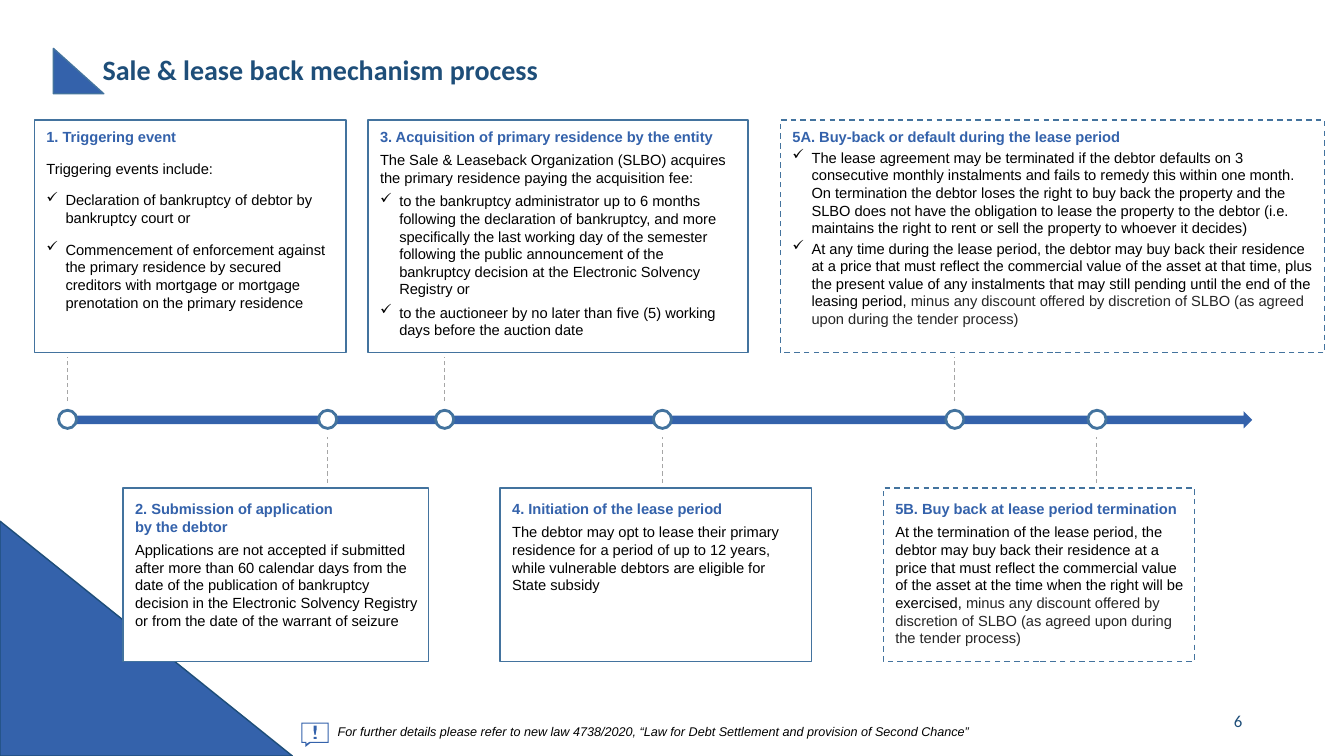
from lxml import etree
from pptx import Presentation
from pptx import util as u
from pptx.dml.color import RGBColor
from pptx.enum import dml, shapes, text
from pptx.oxml import ns

PX = 9144
BLUE = RGBColor(0x34, 0x62, 0xAB)
NAVY = RGBColor(0x1E, 0x4E, 0x79)
EDGE = RGBColor(0x43, 0x73, 0x9E)
GREY = RGBColor(0xA6, 0xA6, 0xA6)
DARK = RGBColor(0x26, 0x26, 0x26)
BLACK = RGBColor(0, 0, 0)
WHITE = RGBColor(0xFF, 0xFF, 0xFF)

HEADING = dict(name="Arial", size=u.Pt(10.5), bold=True, color=BLUE)
BODY = dict(name="Arial", size=u.Pt(10.5), bold=False, color=BLACK)
ASIDE = dict(BODY, color=DARK)
TITLE = dict(name="Calibri", size=u.Pt(20), bold=True, color=NAVY)
NUMBER = dict(name="Calibri", size=u.Pt(12), color=NAVY)
NOTE = dict(name="Arial", size=u.Pt(9), italic=True, color=BLACK)

DISCOUNT = ("minus any discount offered by discretion of SLBO "
            "(as agreed upon during the tender process)")

UPPER_STAGES = [
    dict(box=(34, 119, 309, 231), node=67, before=2, after=8,
         heading="1. Triggering event",
         intro="Triggering events include:",
         bullets=["Declaration of bankruptcy of debtor by bankruptcy court or",
                  "Commencement of enforcement against the primary residence by secured "
                  "creditors with mortgage or mortgage prenotation on the primary residence"]),
    dict(box=(365, 119, 377, 231), node=441, before=2,
         heading="3. Acquisition of primary residence by the entity",
         intro="The Sale & Leaseback Organization (SLBO) acquires the primary residence "
               "paying the acquisition fee:",
         bullets=["to the bankruptcy administrator up to 6 months following the declaration of "
                  "bankruptcy, and more specifically the last working day of the semester "
                  "following the public announcement of the bankruptcy decision at the "
                  "Electronic Solvency Registry or",
                  "to the auctioneer by no later than five (5) working days before the "
                  "auction date"]),
    dict(box=(774, 119, 540, 231), node=947, before=0, dashed=True, aside=DISCOUNT,
         heading="5A. Buy-back or default during the lease period",
         bullets=["The lease agreement may be terminated if the debtor defaults on 3 consecutive "
                  "monthly instalments and fails to remedy this within one month. On termination "
                  "the debtor loses the right to buy back the property and the SLBO does not have "
                  "the obligation to lease the property to the debtor (i.e. maintains the right to "
                  "rent or sell the property to whoever it decides)",
                  "At any time during the lease period, the debtor may buy back their residence at "
                  "a price that must reflect the commercial value of the asset at that time, plus "
                  "the present value of any instalments that may still pending until the end of "
                  "the leasing period, "]),
]
LOWER_STAGES = [
    dict(box=(122, 484, 303, 172), node=325, before=2,
         heading="2. Submission of application\nby the debtor",
         intro="Applications are not accepted if submitted after more than 60 calendar days from "
               "the date of the publication of bankruptcy decision in the Electronic Solvency "
               "Registry or from the date of the warrant of seizure"),
    dict(box=(496, 484, 309, 172), node=657, before=2,
         heading="4. Initiation of the lease period",
         intro="The debtor may opt to lease their primary residence for a period of up to 12 "
               "years, while vulnerable debtors are eligible for State subsidy"),
    dict(box=(876, 484, 309, 172), node=1088, before=2, dashed=True, aside=DISCOUNT,
         heading="5B. Buy back at lease period termination",
         intro="At the termination of the lease period, the debtor may buy back their residence "
               "at a price that must reflect the commercial value of the asset at the time when "
               "the right will be exercised, "),
]


def emu(*lengths):
    """Turn px lengths into EMU."""
    return [n * PX for n in lengths]


def add_shape(s, kind, box, fill, line=None, width=1):
    """Add a flat preset shape with an optional outline."""
    sp = s.shapes.add_shape(kind, *emu(*box))
    sp.shadow.inherit = False
    sp.fill.solid()
    sp.fill.fore_color.rgb = fill
    if line is None:
        sp.line.fill.background()
    else:
        sp.line.color.rgb = line
        sp.line.width = u.Pt(width)
    return sp


def add_line(s, x, top, bottom):
    """Add a dashed vertical leader."""
    line = s.shapes.add_connector(shapes.MSO_CONNECTOR.STRAIGHT, *emu(x, top, x, bottom))
    etree.SubElement(line._element.spPr, ns.qn("a:effectLst"))
    line.line.color.rgb = GREY
    line.line.width = u.Pt(0.75)
    line.line.dash_style = dml.MSO_LINE.DASH


def set_frame(tf, anchor, left, top, right, bottom):
    """Set wrapping, anchor and insets of a text frame."""
    left, top, right, bottom = emu(left, top, right, bottom)
    frame = dict(word_wrap=True, vertical_anchor=anchor, margin_left=left,
                 margin_top=top, margin_right=right, margin_bottom=bottom)
    for key, value in frame.items():
        setattr(tf, key, value)


def add_run(p, words, style):
    """Add styled text, breaking lines at newlines."""
    for i, words_line in enumerate(words.split("\n")):
        if i:
            p.add_line_break()
        r = p.add_run()
        r.text = words_line
        for key, value in style.items():
            if key == "color":
                r.font.color.rgb = value
            else:
                setattr(r.font, key, value)


def add_tick(p):
    """Give a paragraph a hanging tick bullet."""
    pPr = p._p.get_or_add_pPr()
    pPr.set("marL", str(19 * PX))
    pPr.set("indent", str(-19 * PX))
    color = etree.SubElement(pPr, ns.qn("a:buClr"))
    etree.SubElement(color, ns.qn("a:srgbClr")).set("val", str(BLACK))
    etree.SubElement(pPr, ns.qn("a:buChar")).set("char", "✓")


def add_label(s, box, words, style, insets=(10, 5, 10, 5), **formats):
    """Add a one-paragraph text box centred vertically."""
    tf = s.shapes.add_textbox(*emu(*box)).text_frame
    set_frame(tf, text.MSO_ANCHOR.MIDDLE, *insets)
    p = tf.paragraphs[0]
    for key, value in formats.items():
        setattr(p, key, value)
    add_run(p, words, style)


def add_stage(s, stage, inset_top):
    """Add a stage box with heading, text and ticked points."""
    sp = add_shape(s, shapes.MSO_SHAPE.RECTANGLE, stage["box"], WHITE, EDGE)
    if stage.get("dashed"):
        sp.line.dash_style = dml.MSO_LINE.DASH
    tf = sp.text_frame
    set_frame(tf, text.MSO_ANCHOR.TOP, 12, inset_top, 10, 5)
    parts = [(stage["heading"], HEADING, False)]
    if "intro" in stage:
        parts.append((stage["intro"], BODY, False))
    parts += [(words, BODY, True) for words in stage.get("bullets", [])]
    for i, (words, style, ticked) in enumerate(parts):
        p = tf.add_paragraph() if i else tf.paragraphs[0]
        if ticked:
            add_tick(p)
        p.alignment = text.PP_ALIGN.LEFT
        p.space_before = u.Pt(stage["before"] if i else 0)
        p.space_after = u.Pt(stage.get("after", 2))
        add_run(p, words, style)
    if "aside" in stage:
        add_run(p, stage["aside"], ASIDE)


def add_timeline(s, box):
    """Add the arrow with its stages, nodes and leaders."""
    add_shape(s, shapes.MSO_SHAPE.RIGHT_ARROW, box, BLUE)
    top = box[1]
    for stages, inset, start, end in ((UPPER_STAGES, 8, -10, -54), (LOWER_STAGES, 12, 71, 26)):
        for stage in stages:
            add_stage(s, stage, inset)
            x = stage["node"]
            add_shape(s, shapes.MSO_SHAPE.OVAL, (x - 9, top - 1, 18, 18), WHITE, EDGE, 2)
            add_line(s, x, top + start, top + end)


def add_outline(s, x, y, *contours):
    """Add a filled outline from contours relative to a corner."""
    fb = None
    for first, *rest in contours:
        if fb is None:
            fb = s.shapes.build_freeform(x + first[0], y + first[1], scale=PX)
        else:
            fb.move_to(x + first[0], y + first[1])
        fb.add_line_segments([(x + dx, y + dy) for dx, dy in rest], close=True)
    sp = fb.convert_to_shape()
    sp.shadow.inherit = False
    sp.fill.solid()
    sp.fill.fore_color.rgb = BLUE
    sp.line.fill.background()


def add_header(s, x, y):
    """Add the title and its triangle."""
    add_shape(s, shapes.MSO_SHAPE.RIGHT_TRIANGLE, (x, y, 50, 45), BLUE, EDGE)
    add_label(s, (x + 39, y - 8, 1150, 61), "Sale & lease back mechanism process", TITLE,
              line_spacing=0.9)


def add_footer(s, x, y):
    """Add the callout icon, the note and the page number."""
    add_outline(s, x, y,
                [(0, 0), (0, 20), (4, 20), (4, 24), (9, 20), (27, 20), (27, 0)],
                [(8, 19), (5, 21), (5, 19), (1, 19), (1, 1), (26, 1), (26, 19)])
    add_outline(s, x + 12, y + 3,
                [(3, 11), (3, 13), (0, 13), (0, 11)],
                [(2, 9), (1, 9), (0, 4), (0, 0), (3, 0), (3, 4)])
    add_label(s, (x + 36, y - 8, 733, 33),
              "For further details please refer to new law 4738/2020, "
              "“Law for Debt Settlement and provision of Second Chance”", NOTE, (0, 0, 0, 0))
    add_label(s, (x + 643, y - 22, 300, 40), "6", NUMBER, alignment=text.PP_ALIGN.RIGHT)


def main():
    """Build the slide and save it."""
    prs = Presentation()
    prs.slide_width, prs.slide_height = emu(1333, 750)
    s = prs.slides.add_slide(prs.slide_layouts[6])
    add_shape(s, shapes.MSO_SHAPE.RIGHT_TRIANGLE, (0, 517, 290, 233), BLUE, NAVY)
    add_header(s, 53, 48)
    add_timeline(s, (65, 408, 1177, 17))
    add_footer(s, 299, 717)
    prs.save("out.pptx")


if __name__ == "__main__":
    main()
